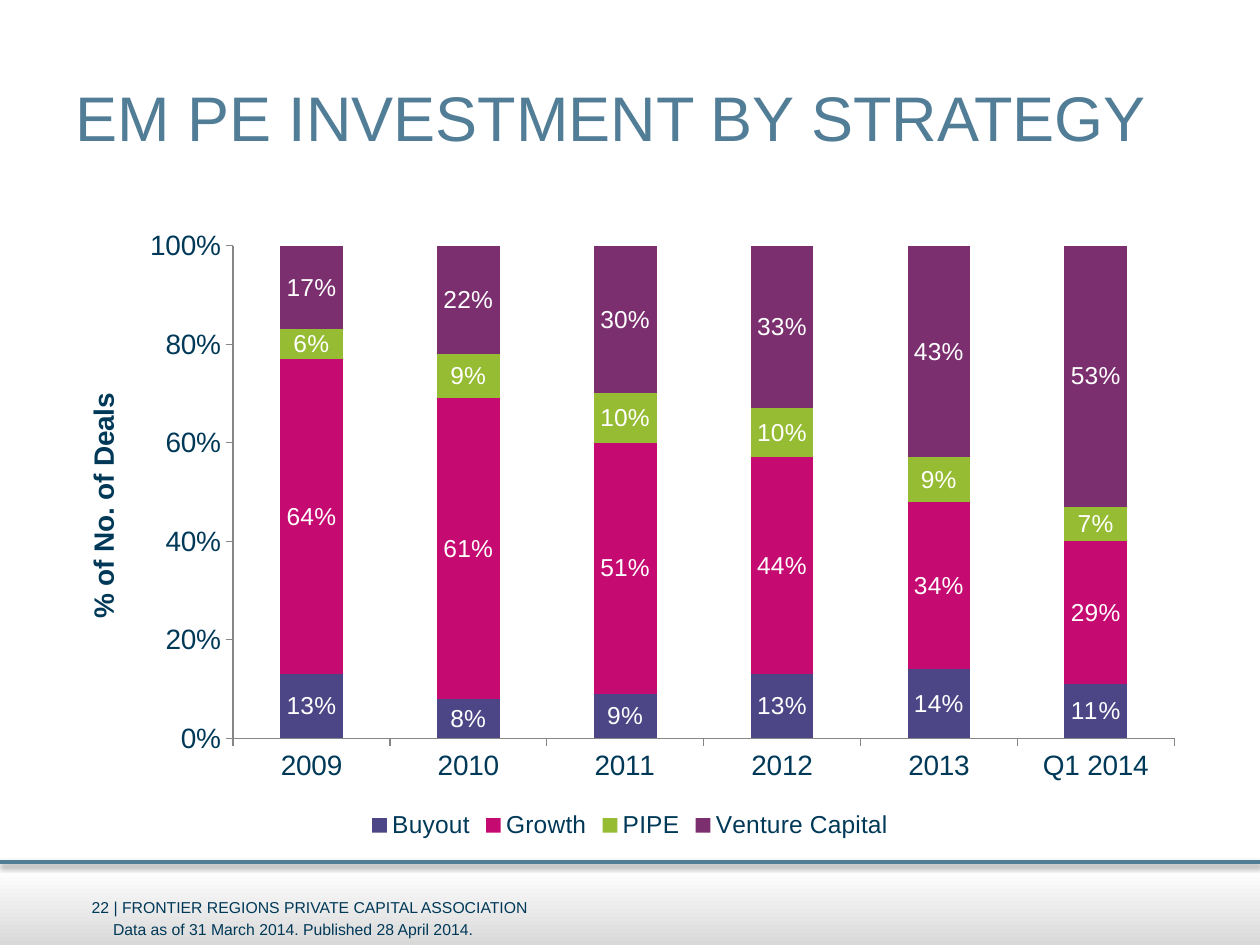
"""Build the slide on emerging-market private equity investment by strategy."""
from dataclasses import dataclass

from lxml import etree
from pptx import Presentation
from pptx import util as u
from pptx.chart import data as chart_data
from pptx.dml import color
from pptx.enum import chart as ch
from pptx.enum import shapes, text
from pptx.oxml import parse_xml
from pptx.oxml.ns import nsdecls, qn
from pptx.slide import Slide

FONT = "Arial"
COLORS = {
    "steel": "527D97",
    "navy": "003958",
    "white": "FFFFFF",
    "grey": "D9D9D9",
    "axis": "868686",
    "buyout": "4D4686",
    "growth": "C50A71",
    "pipe": "96BC33",
    "venture": "7B2F6F",
}
YEARS = ["2009", "2010", "2011", "2012", "2013", "Q1 2014"]
PLOT_BOX = {"x": 0.15, "y": 0.04, "w": 0.83, "h": 0.79}


@dataclass
class Strategy:
    name: str
    shares: list[float]
    fill: str


@dataclass
class Note:
    wording: str
    left: float
    top: float
    width: float
    inset: float


STRATEGIES = [
    Strategy("Buyout", [0.13, 0.08, 0.09, 0.13, 0.14, 0.11], "buyout"),
    Strategy("Growth", [0.64, 0.61, 0.51, 0.44, 0.34, 0.29], "growth"),
    Strategy("PIPE", [0.06, 0.09, 0.10, 0.10, 0.09, 0.07], "pipe"),
    Strategy("Venture Capital", [0.17, 0.22, 0.30, 0.33, 0.43, 0.53], "venture"),
]
NOTES = [
    Note("22 | FRONTIER REGIONS PRIVATE CAPITAL ASSOCIATION", 1.85, 17.96, 16.97, 0),
    Note("Data as of 31 March 2014. Published 28 April 2014.", 2.03, 18.42, 9, 0.25),
]


def rgb(name: str) -> color.RGBColor:
    return color.RGBColor.from_string(COLORS[name])


def style_font(font, size: float, shade: str = "navy", bold: bool = False) -> None:
    font.name, font.size, font.bold = FONT, u.Pt(size), bold
    font.color.rgb = rgb(shade)


def draw_footer_band(slide: Slide) -> None:
    band = slide.shapes.add_shape(
        shapes.MSO_SHAPE.RECTANGLE, u.Cm(0), u.Cm(16.99), u.Cm(25.4), u.Cm(2.06))
    band.shadow.inherit = False
    band.line.fill.background()
    band.fill.gradient()
    band.fill.gradient_angle = 90
    for stop, shade, position in zip(band.fill.gradient_stops, ("grey", "white"), (0, 0.74)):
        stop.color.rgb = rgb(shade)
        stop.position = position

    rule = slide.shapes.add_connector(
        shapes.MSO_CONNECTOR.STRAIGHT, u.Cm(0), u.Cm(17.38), u.Cm(25.4), u.Cm(17.38))
    rule.line.color.rgb = rgb("steel")
    rule.line.width = u.Pt(2)
    rule._element.spPr.append(parse_xml(
        f'<a:effectLst {nsdecls("a")}><a:outerShdw blurRad="{u.Pt(3.1)}" '
        f'dist="{u.Pt(1.6)}" dir="5400000" rotWithShape="0"><a:srgbClr val="000000">'
        '<a:alpha val="38000"/></a:srgbClr></a:outerShdw></a:effectLst>'))


def draw_note(slide: Slide, note: Note) -> None:
    box = slide.shapes.add_textbox(
        u.Cm(note.left), u.Cm(note.top), u.Cm(note.width), u.Cm(0.64))
    frame = box.text_frame
    frame.word_wrap = True
    frame.margin_left = u.Cm(note.inset)
    frame.vertical_anchor = text.MSO_ANCHOR.MIDDLE
    frame.text = note.wording
    style_font(frame.paragraphs[0].font, 9)


def write_title(slide: Slide, wording: str) -> None:
    title = slide.shapes.title
    title.left, title.top, title.width, title.height = (
        u.Cm(1.27), u.Cm(0.76), u.Cm(22.86), u.Cm(3.18))
    title.text_frame.text = wording
    title.text_frame.vertical_anchor = text.MSO_ANCHOR.MIDDLE
    heading = title.text_frame.paragraphs[0]
    heading.alignment = text.PP_ALIGN.LEFT
    style_font(heading.font, 36, "steel")


def place_plot(chart) -> None:
    plot_area = chart._chartSpace.chart.plotArea
    for layout in plot_area.findall(qn("c:layout")):
        plot_area.remove(layout)
    layout = etree.Element(qn("c:layout"))
    manual = etree.SubElement(layout, qn("c:manualLayout"))
    settings = {"layoutTarget": "inner", "xMode": "edge", "yMode": "edge", **PLOT_BOX}
    for tag, value in settings.items():
        etree.SubElement(manual, qn(f"c:{tag}")).set("val", str(value))
    plot_area.insert(0, layout)


def draw_chart(slide: Slide) -> None:
    deals = chart_data.CategoryChartData(number_format="0%")
    deals.categories = YEARS
    for strategy in STRATEGIES:
        deals.add_series(strategy.name, strategy.shares)
    chart = slide.shapes.add_chart(
        ch.XL_CHART_TYPE.COLUMN_STACKED_100,
        u.Cm(1.27), u.Cm(4.45), u.Cm(22.86), u.Cm(12.57), deals).chart
    chart.has_title = False
    style_font(chart.font, 18)
    chart.has_legend = True
    chart.legend.position = ch.XL_LEGEND_POSITION.BOTTOM
    chart.legend.include_in_layout = False
    style_font(chart.legend.font, 14)

    plot = chart.plots[0]
    plot.gap_width, plot.overlap, plot.vary_by_categories = 150, 100, False
    for series, strategy in zip(plot.series, STRATEGIES):
        series.format.fill.solid()
        series.format.fill.fore_color.rgb = rgb(strategy.fill)
        labels = series.data_labels
        labels.show_value = True
        labels.number_format, labels.number_format_is_linked = "0%", False
        style_font(labels.font, 14, "white")

    for axis in (chart.category_axis, chart.value_axis):
        axis.has_major_gridlines = False
        axis.major_tick_mark = ch.XL_TICK_MARK.OUTSIDE
        axis.minor_tick_mark = ch.XL_TICK_MARK.NONE
        axis.format.line.color.rgb = rgb("axis")
        style_font(axis.tick_labels.font, 16)

    share_axis = chart.value_axis
    share_axis.minimum_scale, share_axis.maximum_scale, share_axis.major_unit = 0, 1, 0.2
    share_axis.tick_labels.number_format = "0%"
    share_axis.tick_labels.number_format_is_linked = False
    caption = share_axis.axis_title.text_frame
    caption.text = "% of No. of Deals"
    caption._txBody.bodyPr.set("rot", "-5400000")
    caption._txBody.bodyPr.set("vert", "horz")
    style_font(caption.paragraphs[0].font, 16, bold=True)
    place_plot(chart)


def main() -> None:
    deck = Presentation()
    deck.slide_width, deck.slide_height = u.Cm(25.4), u.Cm(19.05)
    slide = deck.slides.add_slide(deck.slide_layouts[5])
    draw_footer_band(slide)
    write_title(slide, "EM PE INVESTMENT BY STRATEGY")
    draw_chart(slide)
    for note in NOTES:
        draw_note(slide, note)
    deck.save("out.pptx")


if __name__ == "__main__":
    main()
